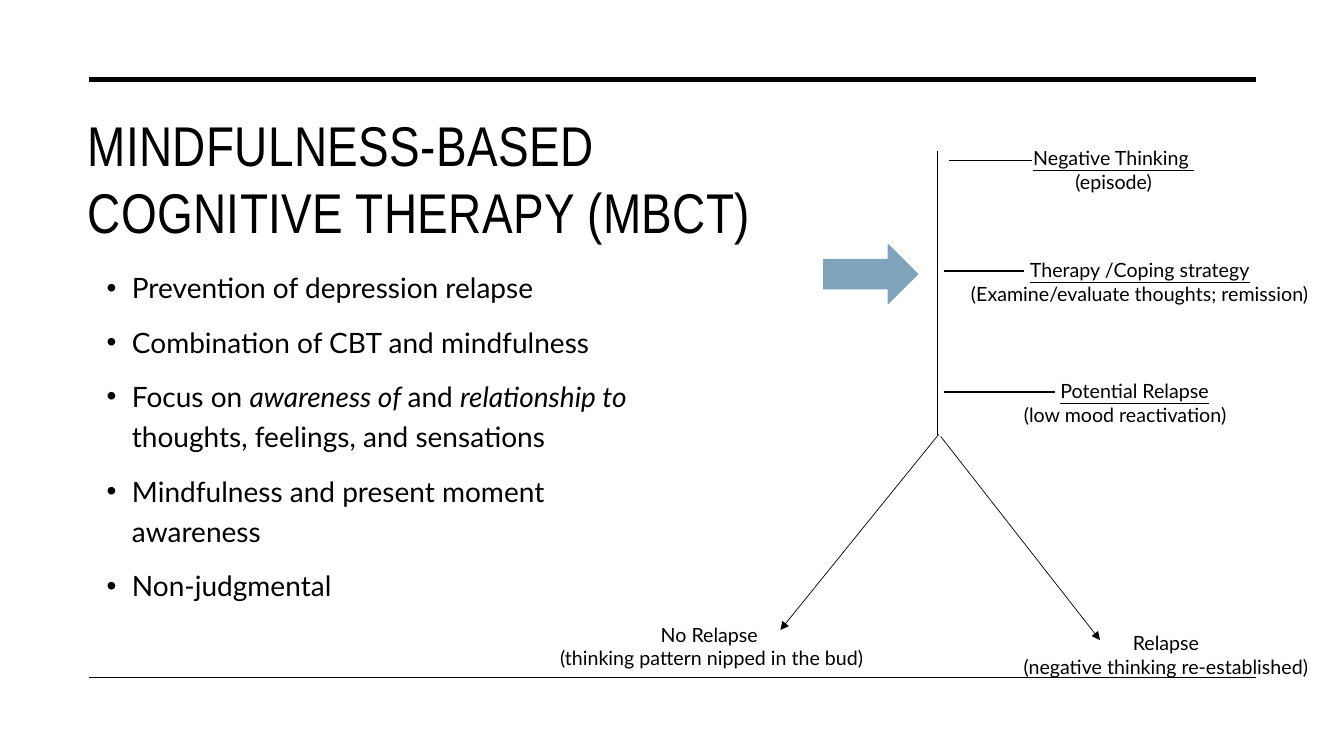
from lxml import etree
from pptx import Presentation
from pptx import util as u
from pptx.dml.color import RGBColor
from pptx.enum import shapes, text
from pptx.oxml.ns import qn

PX = 9144  # 100 px to the inch
BLACK, BLUE = "000000", "7FA3BA"
CENTER, LEFT = text.PP_ALIGN.CENTER, text.PP_ALIGN.LEFT


def px(length):
    return u.Emu(length * PX)


def color(value):
    return RGBColor.from_string(value)


def add_span(para, words, size=14, font="Lato", fill=BLACK, italic=False,
             underline=False, spacing=0):
    """Append a run; spacing is in hundredths of a point."""
    span = para.add_run()
    span.text = words
    span.font.size, span.font.name = u.Pt(size), font
    span.font.italic, span.font.underline = italic, underline
    span.font.bold = False
    span.font.color.rgb = color(fill)
    if spacing:
        span.font._element.set("spc", str(spacing))


def indent(para, left, first=0):
    properties = para._p.get_or_add_pPr()
    properties.set("marL", str(px(left)))
    properties.set("indent", str(px(first)))
    return properties


class Slide:
    """Holds the deck, its current page and the shared style."""

    def __init__(self, width, height):
        self.deck = Presentation()
        self.deck.slide_width, self.deck.slide_height = px(width), px(height)
        self.page = self.deck.slides.add_slide(self.deck.slide_layouts[5])

    def title(self, words, left, top, width, height):
        box = self.page.shapes.title
        box.left, box.top = px(left), px(top)
        box.width, box.height = px(width), px(height)
        frame = box.text_frame
        frame.word_wrap = True
        frame.auto_size = text.MSO_AUTO_SIZE.NONE
        frame.vertical_anchor = text.MSO_ANCHOR.MIDDLE
        para = frame.paragraphs[0]
        para.alignment = LEFT
        add_span(para, words, size=40, font="Arial Narrow", spacing=30)

    def frame(self, left, top, width, height):
        box = self.page.shapes.add_textbox(px(left), px(top), px(width), px(height))
        box.text_frame.word_wrap = True
        return box.text_frame

    def bullets(self, items, left, top, width, height):
        """Each item is a list of spans; every second span is italic."""
        frame = self.frame(left, top, width, height)
        for index, item in enumerate(items):
            para = frame.add_paragraph() if index else frame.paragraphs[0]
            para.line_spacing, para.space_before = 1.2, u.Pt(10)
            properties = indent(para, 25, -25)
            etree.SubElement(properties, qn("a:buFont")).set("typeface", "Arial")
            etree.SubElement(properties, qn("a:buChar")).set("char", "•")
            for position, words in enumerate(item):
                add_span(para, words, size=20, italic=position % 2 == 1)

    def label(self, heading, detail, left, top, width, underline=False, heading_indent=0):
        """Two lines, centred unless the heading has its own indent."""
        frame = self.frame(left, top, width, 57)
        first, second = frame.paragraphs[0], frame.add_paragraph()
        first.alignment = LEFT if heading_indent else CENTER
        second.alignment = CENTER
        if heading_indent:
            indent(first, heading_indent)
        add_span(first, heading, underline=underline)
        add_span(second, detail)

    def line(self, start, end, weight, arrow=False):
        line = self.page.shapes.add_connector(
            shapes.MSO_CONNECTOR.STRAIGHT, *map(px, start + end))
        line.line.color.rgb = color(BLACK)
        line.line.width = u.Pt(weight)
        if arrow:
            head = etree.SubElement(line.line._get_or_add_ln(), qn("a:tailEnd"))
            head.set("type", "triangle")
        etree.SubElement(line._element.spPr, qn("a:effectLst"))

    def block_arrow(self, left, top, width, height):
        arrow = self.page.shapes.add_shape(
            shapes.MSO_SHAPE.RIGHT_ARROW, px(left), px(top), px(width), px(height))
        arrow.shadow.inherit = False
        arrow.fill.solid()
        arrow.fill.fore_color.rgb = color(BLUE)
        arrow.line.color.rgb = color(BLUE)
        arrow.line.width = u.Pt(1)


def main():
    slide = Slide(1333, 750)
    for y, weight in ((79, 3.5), (672, 1)):
        slide.line((88, y), (1246, y), weight)
    slide.title("MINDFULNESS-BASED COGNITIVE THERAPY (MBCT)", 77, 101, 734, 150)
    slide.bullets([
        ["Prevention of depression relapse"],
        ["Combination of CBT and mindfulness"],
        ["Focus on ", "awareness of ", "and ", "relationship to ",
         "thoughts, feelings, and sensations"],
        ["Mindfulness and present moment awareness"],
        ["Non-judgmental"],
    ], 96, 257, 558, 396)

    # Timeline with its fork into two outcomes
    slide.line((930, 150), (930, 432), 0.5)
    slide.line((933, 433), (1091, 635), 0.5, arrow=True)
    slide.line((931, 431), (774, 625), 0.5, arrow=True)
    for left, right, y in ((941, 1024, 159), (936, 1016, 269), (936, 1046, 389)):
        slide.line((left, y), (right, y), 1)

    slide.label("Negative Thinking ", "(episode)", 950, 140, 309, underline=True)
    slide.label("Therapy /Coping strategy", "(Examine/evaluate thoughts; remission)",
                944, 251, 373, underline=True)
    slide.label("Potential Relapse", "(low mood reactivation)",
                966, 371, 300, underline=True, heading_indent=76)
    slide.label("Relapse", "(negative thinking re-established)", 980, 621, 353)
    slide.label("No Relapse ", "(thinking pattern nipped in the bud)", 515, 613, 382)
    slide.block_arrow(817, 243, 93, 58)
    slide.deck.save("out.pptx")


if __name__ == "__main__":
    main()
